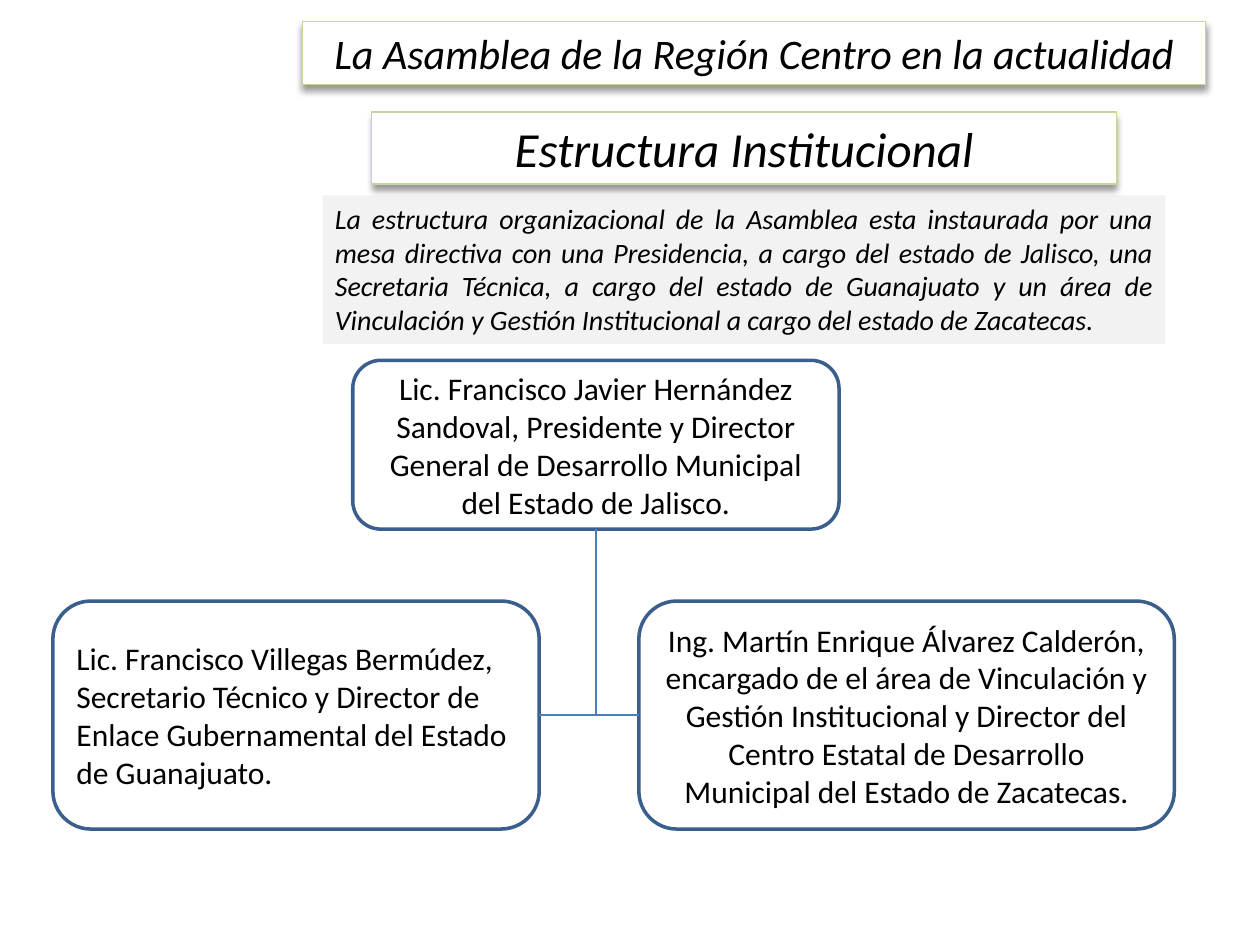
from dataclasses import dataclass

from lxml.etree import SubElement
from pptx import Presentation
from pptx.dml.color import RGBColor
from pptx.enum.shapes import MSO_CONNECTOR, MSO_SHAPE
from pptx.enum.text import MSO_ANCHOR, MSO_AUTO_SIZE, PP_ALIGN
from pptx.oxml.ns import qn
from pptx.shapes.autoshape import Shape
from pptx.shapes.connector import Connector
from pptx.slide import Slide
from pptx.util import Inches, Pt

BLACK = RGBColor(0x00, 0x00, 0x00)
WHITE = RGBColor(0xFF, 0xFF, 0xFF)
LIGHT_GRAY = RGBColor(0xF2, 0xF2, 0xF2)
GREEN = RGBColor(0xC3, 0xD6, 0x9B)
DARK_BLUE = RGBColor(0x3A, 0x5F, 0x8C)
LINE_BLUE = RGBColor(0x4B, 0x7E, 0xBC)
FONT = "Calibri"
TOP, LEFT, BOTTOM, RIGHT = range(4)


@dataclass(frozen=True)
class Box:
    left: float
    top: float
    width: float
    height: float

    def lengths(self) -> tuple:
        return tuple(Inches(v) for v in (self.left, self.top, self.width, self.height))


@dataclass(frozen=True)
class Member:
    box: Box
    text: str
    align: PP_ALIGN = PP_ALIGN.CENTER


PRESIDENT = Member(
    Box(2.8, 2.86, 3.86, 1.34),
    "Lic. Francisco Javier Hernández Sandoval, Presidente y Director General "
    "de Desarrollo Municipal del Estado de Jalisco.",
)
LIAISON = Member(
    Box(5.07, 4.77, 4.25, 1.81),
    "Ing. Martín Enrique Álvarez Calderón, encargado de el área de Vinculación "
    "y Gestión Institucional y Director del Centro Estatal de Desarrollo "
    "Municipal del Estado de Zacatecas.",
)
SECRETARY = Member(
    Box(0.42, 4.77, 3.86, 1.81),
    "Lic. Francisco Villegas Bermúdez, Secretario Técnico y Director de Enlace "
    "Gubernamental del Estado de Guanajuato.",
    PP_ALIGN.LEFT,
)
STRUCTURE = (
    "La estructura organizacional de la Asamblea esta instaurada por una mesa "
    "directiva con una Presidencia, a cargo del estado de Jalisco, una Secretaria "
    "Técnica, a cargo del estado de Guanajuato y un área de Vinculación y Gestión "
    "Institucional a cargo del estado de Zacatecas."
)


def write_text(shape: Shape, text: str, *, size: int, align: PP_ALIGN = PP_ALIGN.CENTER,
               italic: bool = False, anchor: MSO_ANCHOR = MSO_ANCHOR.TOP) -> None:
    frame = shape.text_frame
    frame.word_wrap = True
    frame.auto_size = MSO_AUTO_SIZE.NONE
    frame.vertical_anchor = anchor
    paragraph = frame.paragraphs[0]
    paragraph.alignment = align
    run = paragraph.add_run()
    run.text = text
    run.font.name = FONT
    run.font.size = Pt(size)
    run.font.italic = italic
    run.font.color.rgb = BLACK


def paint(shape: Shape, fill: RGBColor, line: RGBColor, width: float) -> None:
    shape.fill.solid()
    shape.fill.fore_color.rgb = fill
    shape.line.color.rgb = line
    shape.line.width = Pt(width)
    shape.shadow.inherit = False


def add_drop_shadow(shape: Shape) -> None:
    effects = shape.element.spPr.find(qn("a:effectLst"))
    shadow = SubElement(effects, qn("a:outerShdw"), blurRad=str(Pt(4)), dist=str(Pt(3)),
                        dir="5400000", rotWithShape="0")
    color = SubElement(shadow, qn("a:srgbClr"), val=str(BLACK))
    SubElement(color, qn("a:alpha"), val="40000")


def format_heading(shape: Shape, box: Box, text: str, size: int) -> None:
    shape.left, shape.top, shape.width, shape.height = box.lengths()
    paint(shape, WHITE, GREEN, 0.75)
    add_drop_shadow(shape)
    write_text(shape, text, size=size, italic=True)


def add_member(slide: Slide, member: Member) -> Shape:
    shape = slide.shapes.add_shape(MSO_SHAPE.ROUNDED_RECTANGLE, *member.box.lengths())
    paint(shape, WHITE, DARK_BLUE, 2)
    write_text(shape, member.text, size=18, align=member.align, anchor=MSO_ANCHOR.MIDDLE)
    return shape


def add_line(slide: Slide, start: tuple, end: tuple) -> Connector:
    connector = slide.shapes.add_connector(MSO_CONNECTOR.STRAIGHT, *start, *end)
    connector.line.color.rgb = LINE_BLUE
    connector.line.width = Pt(0.75)
    SubElement(connector.element.spPr, qn("a:effectLst"))
    return connector


def add_structure_lines(slide: Slide, president: Shape, secretary: Shape, liaison: Shape) -> None:
    center = president.left + president.width // 2
    middle = secretary.top + secretary.height // 2
    trunk = add_line(slide, (center, president.top + president.height), (center, middle))
    trunk.begin_connect(president, BOTTOM)
    branch = add_line(slide, (secretary.left + secretary.width, middle), (liaison.left, middle))
    branch.begin_connect(secretary, RIGHT)
    branch.end_connect(liaison, LEFT)


def main() -> None:
    presentation = Presentation()
    presentation.slide_width = Inches(10)
    presentation.slide_height = Inches(7.5)
    slide = presentation.slides.add_slide(presentation.slide_layouts[5])

    president, liaison, secretary = [
        add_member(slide, member) for member in (PRESIDENT, LIAISON, SECRETARY)
    ]
    add_structure_lines(slide, president, secretary, liaison)

    description = slide.shapes.add_textbox(*Box(2.56, 1.55, 6.69, 1.18).lengths())
    description.fill.solid()
    description.fill.fore_color.rgb = LIGHT_GRAY
    write_text(description, STRUCTURE, size=16, align=PP_ALIGN.JUSTIFY, italic=True)

    subtitle_box = Box(2.95, 0.89, 5.91, 0.57)
    subtitle = slide.shapes.add_textbox(*subtitle_box.lengths())
    format_heading(subtitle, subtitle_box, "Estructura Institucional", 28)
    format_heading(slide.shapes.title, Box(2.4, 0.17, 7.17, 0.5),
                   "La Asamblea de la Región Centro en la actualidad", 24)

    presentation.save("out.pptx")


if __name__ == "__main__":
    main()
